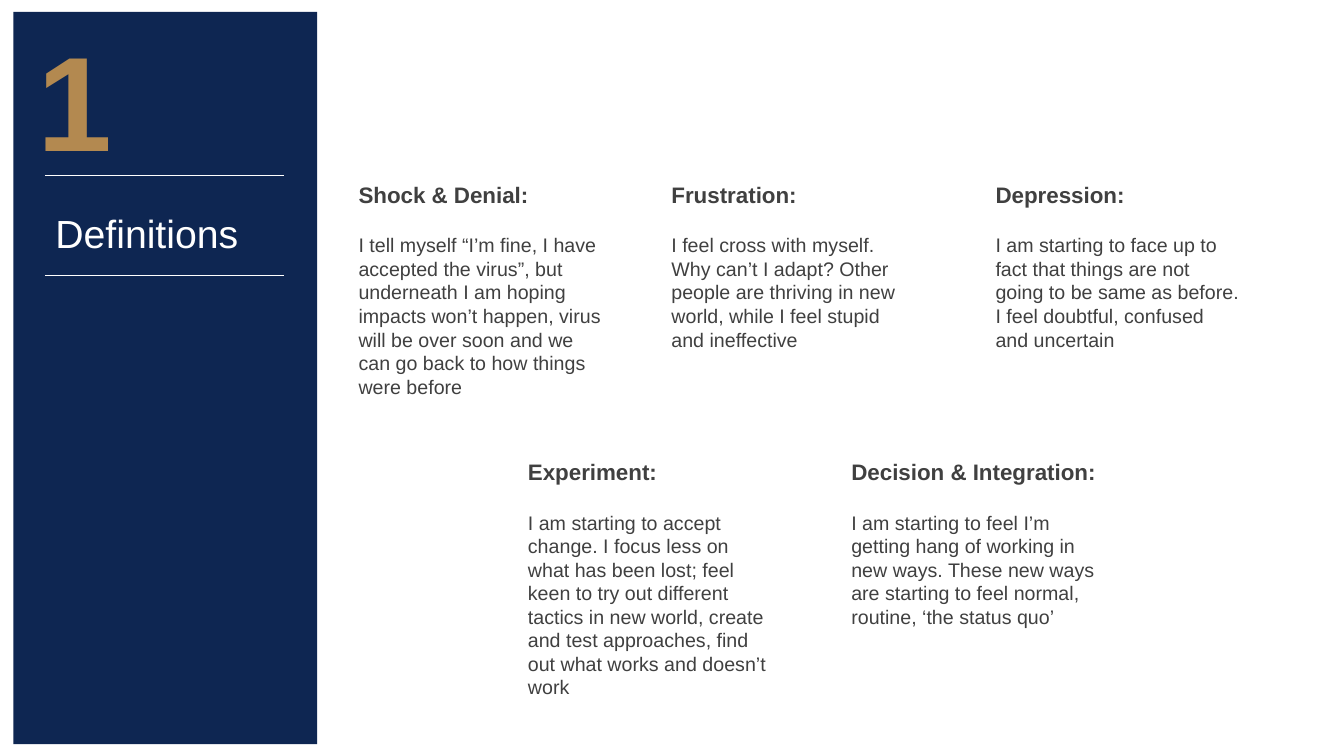
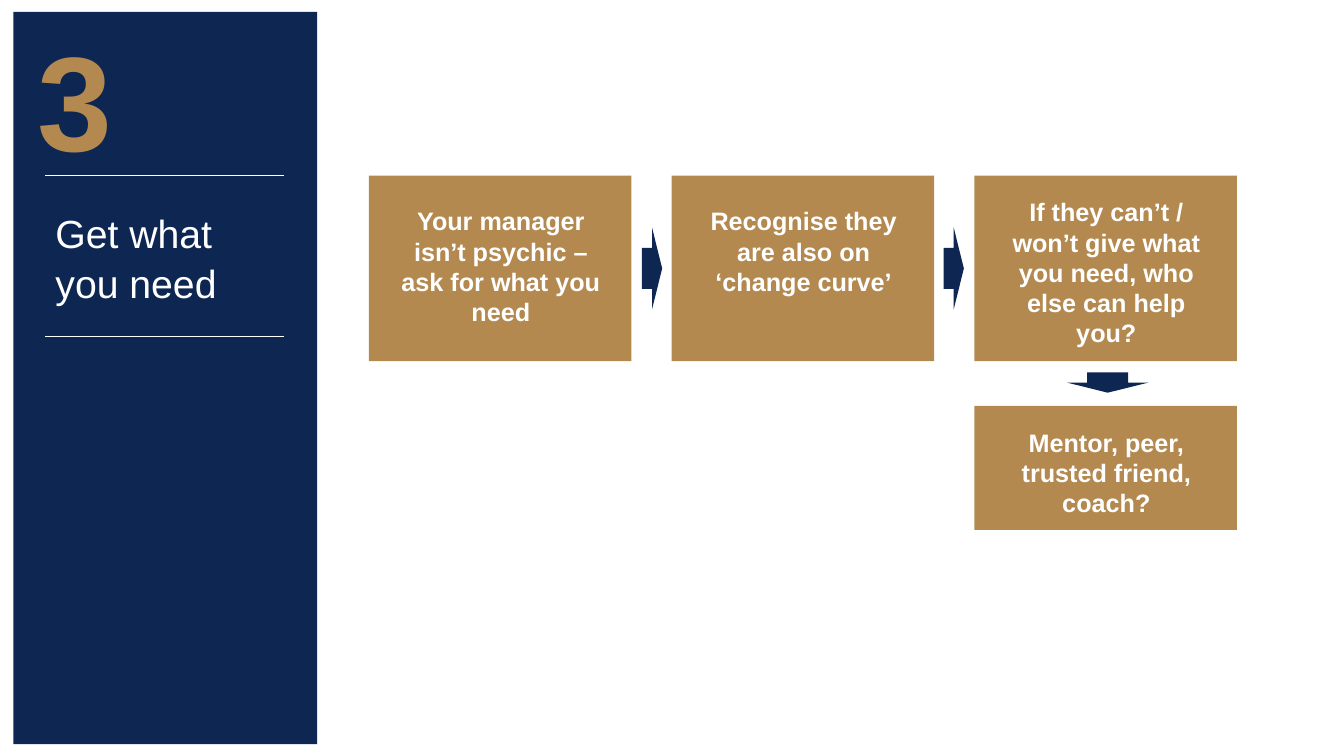
from pptx import Presentation
from pptx.dml.color import RGBColor
from pptx.enum.shapes import MSO_CONNECTOR, MSO_SHAPE
from pptx.enum.text import MSO_ANCHOR, PP_ALIGN
from pptx.util import Pt
from lxml import etree

RECT = MSO_SHAPE.RECTANGLE
RIGHT = MSO_SHAPE.RIGHT_ARROW
DOWN = MSO_SHAPE.DOWN_ARROW
LINE = MSO_CONNECTOR.STRAIGHT
TOP = MSO_ANCHOR.TOP
LEFT, MID = PP_ALIGN.LEFT, PP_ALIGN.CENTER
A_NS = "http://schemas.openxmlformats.org/drawingml/2006/main"

THEME = {
    "navy": RGBColor(0x0E, 0x26, 0x52),
    "gold": RGBColor(0xB3, 0x89, 0x50),
    "white": RGBColor(0xFF, 0xFF, 0xFF),
    "gray": RGBColor(0x40, 0x40, 0x40),
    "number": {"size": Pt(96), "bold": True},
    "title": {"size": Pt(28), "bold": False},
    "head": {"size": Pt(16), "bold": True},
    "body": {"size": Pt(14), "bold": False},
    "step": {"size": Pt(18), "bold": True},
}


def write(shape, parts, color, align=LEFT, pad=(7.2, 3.6, 7.2, 3.6), gap=0, lead=None):
    frame = shape.text_frame
    left, top, right, bottom = map(Pt, pad)
    setup = {"word_wrap": True, "vertical_anchor": TOP, "margin_left": left,
             "margin_top": top, "margin_right": right, "margin_bottom": bottom}
    for name, value in setup.items():
        setattr(frame, name, value)
    for i, (text, style) in enumerate(parts):
        para = frame.add_paragraph() if i else frame.paragraphs[0]
        para.alignment = align
        para.line_spacing = lead
        para.space_before = Pt(gap if i else 0)
        run = para.add_run()
        run.text = text
        run.font.color.rgb = THEME[color]
        for name, value in {"name": "Arial", **THEME[style]}.items():
            setattr(run.font, name, value)


def block(slide, kind, box, color):
    shape = slide.shapes.add_shape(kind, *map(Pt, box))
    shape.shadow.inherit = False
    shape.fill.solid()
    shape.fill.fore_color.rgb = THEME[color]
    shape.line.fill.background()
    return shape


deck = Presentation()
deck.slide_width, deck.slide_height = Pt(960), Pt(540)
blank = deck.slide_layouts[6]

slides = []
for number, title, rule in [("1", "Definitions", 197), ("3", "Get what you need", 240)]:
    slide = deck.slides.add_slide(blank)
    slides.append(slide)
    block(slide, RECT, (9.5, 8.5, 217, 523), "navy")
    label = slide.shapes.add_textbox(Pt(32.5), Pt(144.5), Pt(170.5), Pt(86))
    write(label, [(title, "title")], "white", lead=1.05)
    label = slide.shapes.add_textbox(Pt(20), Pt(8.5), Pt(64), Pt(117.5))
    write(label, [(number, "number")], "gold")
    for y in (125.5, rule):
        line = slide.shapes.add_connector(LINE, Pt(32.5), Pt(y), Pt(203), Pt(y))
        line.line.color.rgb = THEME["white"]
        line.line.width = Pt(0.5)
        etree.SubElement(line._element.spPr, f"{{{A_NS}}}effectLst")

terms, needs = slides

stages = [
    (249, 125.5, "Shock & Denial:",
     "I tell myself “I’m fine, I have accepted the virus”, but underneath I am hoping "
     "impacts won’t happen, virus will be over soon and we can go back to how things "
     "were before"),
    (472.5, 125.5, "Frustration:",
     "I feel cross with myself. Why can’t I adapt? Other people are thriving in new "
     "world, while I feel stupid and ineffective"),
    (704, 125.5, "Depression:",
     "I am starting to face up to fact that things are not going to be same as before. "
     "I feel doubtful, confused and uncertain"),
    (370, 323.5, "Experiment:",
     "I am starting to accept change. I focus less on what has been lost; feel keen to "
     "try out different tactics in new world, create and test approaches, find out what "
     "works and doesn’t work"),
    (601, 323.5, "Decision & Integration:",
     "I am starting to feel I’m getting hang of working in new ways. These new ways are "
     "starting to feel normal, routine, ‘the status quo’"),
]
for x, y, head, body in stages:
    label = terms.shapes.add_textbox(Pt(x), Pt(y), Pt(190), Pt(165))
    write(label, [(head, "head"), (body, "body")], "gray", gap=18.4)

FIRST, STEP, WIDE, TALL = 263.5, 216.25, 187.5, 132.5
steps = [
    (0, 125.5, TALL, 21.5, "Your manager isn’t psychic – ask for what you need"),
    (1, 125.5, TALL, 21.5, "Recognise they are also on ‘change curve’"),
    (2, 125.5, TALL, 15, "If they can’t / won’t give what you need, who else can help you?"),
    (2, 290, 88.5, 15, "Mentor, peer, trusted friend, coach?"),
]
for col, y, high, inset, text in steps:
    card = block(needs, RECT, (FIRST + col * STEP, y, WIDE, high), "gold")
    write(card, [(text, "step")], "white", MID, (22, inset, 21, 0))

for col in range(2):
    block(needs, RIGHT, (458.5 + col * 215.5, 162.5, 14.5, 58.5), "navy")
block(needs, DOWN, (762, 266, 58.5, 14.5), "navy")

deck.save("out.pptx")
